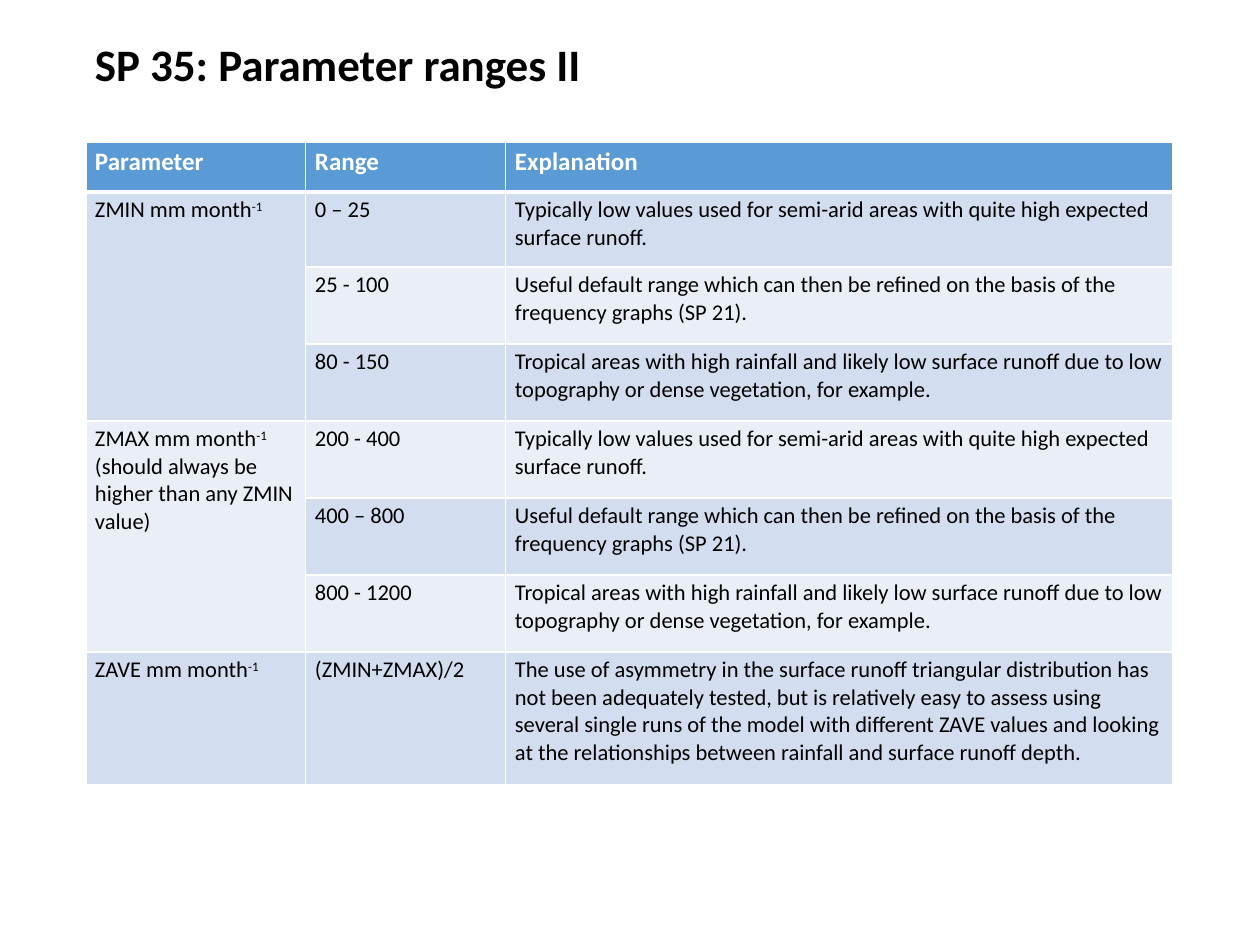
from lxml.etree import SubElement
from pptx import Presentation
from pptx.dml.color import RGBColor
from pptx.enum.text import MSO_ANCHOR as ANCHOR
from pptx.oxml.ns import qn
from pptx.util import Pt

PX = 914400 // 90
FONT = "Calibri"
WHITE, BLACK = "FFFFFF", "000000"
HEADER, BANDS = "5B9BD5", ("EAEFF7", "D2DEEF")

COLUMNS = [220, 200, 667]
ROWS = [50, 75] + [77] * 5 + [133]
HEADINGS = ["Parameter", "Range", "Explanation"]
LOW = ("Typically low values used for semi-arid areas with quite high "
       "expected surface runoff.")
DEFAULT = ("Useful default range which can then be refined on the basis of "
           "the frequency graphs (SP 21).")
TROPICAL = ("Tropical areas with high rainfall and likely low surface runoff "
            "due to low topography or dense vegetation, for example.")
AVERAGE = ("The use of asymmetry in the surface runoff triangular distribution "
           "has not been adequately tested, but is relatively easy to assess "
           "using several single runs of the model with different ZAVE values "
           "and looking at the relationships between rainfall and surface "
           "runoff depth.")
# Each parameter: name, note after the unit, (range, explanation) rows
PARAMETERS = [
    ("ZMIN", "", [("0 – 25", LOW), ("25 - 100", DEFAULT),
                  ("80 - 150", TROPICAL)]),
    ("ZMAX", "(should always be higher than any ZMIN value)",
     [("200 - 400", LOW), ("400 – 800", DEFAULT), ("800 - 1200", TROPICAL)]),
    ("ZAVE", "", [("(ZMIN+ZMAX)/2", AVERAGE)]),
]


def rgb(color):
    return RGBColor.from_string(color)


def set_font(p, size, color, bold=False):
    f = p.font
    f.name, f.size, f.bold = FONT, Pt(size), bold
    f.color.rgb = rgb(color)


def set_borders(cell, bottom, top):
    tcPr = cell._tc.get_or_add_tcPr()
    for side, width in (("L", 1), ("R", 1), ("T", top), ("B", bottom)):
        ln = SubElement(tcPr, qn(f"a:ln{side}"), w=str(Pt(width)))
        fill = SubElement(ln, qn("a:solidFill"))
        SubElement(fill, qn("a:srgbClr"), val=WHITE)


def add_title(s, text, x, y, w, h):
    tf = s.shapes.add_textbox(x * PX, y * PX, w * PX, h * PX).text_frame
    tf.word_wrap = True
    tf.vertical_anchor = ANCHOR.MIDDLE
    p = tf.paragraphs[0]
    p.text = text
    p.line_spacing = 0.9
    set_font(p, 36, BLACK, True)


def fill_parameter(cell, name, note):
    p = cell.text_frame.paragraphs[0]
    p.add_run().text = f"{name} mm month"
    r = p.add_run()
    r.text = "-1 " if note else "-1"
    r.font._element.set("baseline", "30000")
    if note:
        p.add_run().text = note


def add_parameter_table(s, x, y):
    frame = s.shapes.add_table(len(ROWS), len(COLUMNS), x * PX, y * PX,
                               sum(COLUMNS) * PX, sum(ROWS) * PX)
    table = frame.table
    for column, width in zip(table.columns, COLUMNS):
        column.width = width * PX
    for row, height in zip(table.rows, ROWS):
        row.height = height * PX

    # Wording
    for col, heading in enumerate(HEADINGS):
        table.cell(0, col).text = heading
    first = 1
    for name, note, ranges in PARAMETERS:
        label = table.cell(first, 0)
        fill_parameter(label, name, note)
        for i, texts in enumerate(ranges, first):
            for col, text in enumerate(texts, 1):
                table.cell(i, col).text = text
        last = first + len(ranges) - 1
        if last > first:
            label.merge(table.cell(last, 0))
        first = last + 1

    # Banding, borders and fonts
    for i, row in enumerate(table.rows):
        head = i == 0
        for cell in row.cells:
            set_borders(cell, 3 if head else 1, 3 if i == 1 else 1)
            cell.fill.solid()
            cell.fill.fore_color.rgb = rgb(HEADER if head else BANDS[i % 2])
            set_font(cell.text_frame.paragraphs[0], 20 if head else 18,
                     WHITE if head else BLACK, head)


def main():
    prs = Presentation()
    prs.slide_width, prs.slide_height = 1260 * PX, 945 * PX
    s = prs.slides.add_slide(prs.slide_layouts[6])
    add_title(s, "SP 35: Parameter ranges II", 86, 34, 1086, 65)
    add_parameter_table(s, 86, 142)
    prs.save("out.pptx")


if __name__ == "__main__":
    main()
